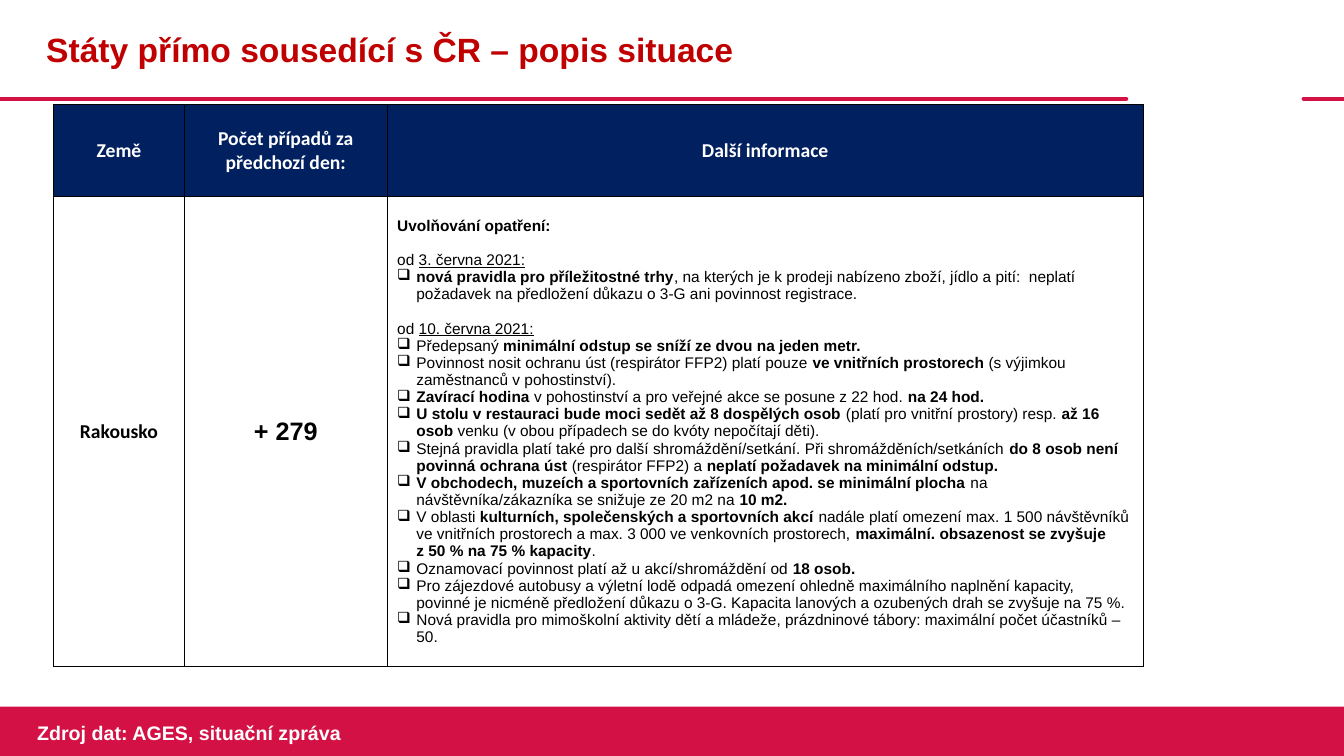
from lxml import etree
from pptx import Presentation
from pptx.dml.color import RGBColor
from pptx.enum import shapes, text
from pptx.oxml import ns
from pptx.util import Inches, Pt

COLORS = {"crimson": "D31145", "title": "C00000", "navy": "002060",
          "white": "FFFFFF", "black": "000000"}

HEADERS = ["Země", "Počet případů za předchozí den:", "Další informace"]

# Measures by start date; asterisks enclose bold text
MEASURES = {
    "3. června 2021:": [
        "*nová pravidla pro příležitostné trhy*, na kterých je k prodeji nabízeno zboží, "
        "jídlo a pití: \u00a0neplatí požadavek na předložení důkazu o 3-G ani povinnost registrace.",
    ],
    "10. června 2021:": [
        "Předepsaný *minimální odstup se sníží ze dvou na jeden metr.*",
        "Povinnost nosit ochranu úst (respirátor FFP2) platí pouze *ve vnitřních prostorech* "
        "(s výjimkou zaměstnanců v pohostinství).",
        "*Zavírací hodina* v pohostinství a pro veřejné akce se posune z 22 hod. *na 24 hod.*",
        "*U stolu v restauraci bude moci sedět až 8 dospělých osob* (platí pro vnitřní prostory) "
        "resp. *až 16 osob* venku (v obou případech se do kvóty nepočítají děti).",
        "Stejná pravidla platí také pro další shromáždění/setkání. Při shromážděních/setkáních "
        "*do 8 osob není povinná ochrana úst* (respirátor FFP2) a "
        "*neplatí požadavek na minimální odstup.*",
        "*V obchodech, muzeích a sportovních zařízeních apod. se minimální plocha* na "
        "návštěvníka/zákazníka se snižuje ze 20 m2 na* 10 m2.*",
        "V oblasti *kulturních, společenských a sportovních akcí *nadále platí omezení max. "
        "1 500 návštěvníků ve vnitřních prostorech a max. 3 000 ve venkovních prostorech, "
        "*maximální. obsazenost se zvyšuje z\u00a050 % na 75 % kapacity*.",
        "Oznamovací povinnost platí až u akcí/shromáždění od *18 osob.*",
        "Pro zájezdové autobusy a výletní lodě odpadá omezení ohledně maximálního naplnění "
        "kapacity, povinné je nicméně předložení důkazu o 3-G. Kapacita lanových a ozubených "
        "drah se zvyšuje na 75 %.",
        "Nová pravidla pro mimoškolní aktivity dětí a mládeže, prázdninové tábory: maximální "
        "počet účastníků – 50.",
    ],
}


def rgb(name):
    return RGBColor.from_string(COLORS[name])


def style(para, size, color="black", font="Arial", bold=False):
    para.font.name = font
    para.font.size = Pt(size)
    para.font.bold = bold
    para.font.color.rgb = rgb(color)


def add_rule(page, start, end):
    y = Inches(0.98)
    rule = page.shapes.add_connector(
        shapes.MSO_CONNECTOR.STRAIGHT, Inches(start), y, Inches(end), y)
    rule.line.color.rgb = rgb("crimson")
    rule.line.width = Pt(3)
    rule.line._get_or_add_ln().set("cap", "rnd")
    etree.SubElement(rule._element.spPr, ns.qn("a:effectLst"))


def add_band(page, top, height):
    band = page.shapes.add_shape(
        shapes.MSO_SHAPE.RECTANGLE, 0, Inches(top), Inches(13.33), Inches(height))
    band.shadow.inherit = False
    band.fill.solid()
    band.fill.fore_color.rgb = rgb("crimson")
    band.line.fill.background()


def add_label(page, words, place, size, color, wrap=True):
    box = page.shapes.add_textbox(*map(Inches, place))
    frame = box.text_frame
    frame.word_wrap = wrap
    frame.vertical_anchor = text.MSO_ANCHOR.MIDDLE
    para = frame.paragraphs[0]
    para.text = words
    style(para, size, color, bold=True)


def set_borders(cell):
    properties = cell._tc.get_or_add_tcPr()
    for position, side in enumerate(("lnL", "lnR", "lnT", "lnB")):
        line = etree.Element(ns.qn(f"a:{side}"), w=str(Pt(1)))
        fill = etree.SubElement(line, ns.qn("a:solidFill"))
        etree.SubElement(fill, ns.qn("a:srgbClr"), val=COLORS["black"])
        properties.insert(position, line)


def fill_cell(cell, words, size, color="black", font="Calibri"):
    para = cell.text_frame.paragraphs[0]
    para.text = words
    para.alignment = text.PP_ALIGN.CENTER
    style(para, size, color, font, bold=True)


def add_bullet(para):
    properties = para._p.get_or_add_pPr()
    indent = Inches(0.19)
    properties.set("marL", str(indent))
    properties.set("indent", str(-indent))
    etree.SubElement(properties, ns.qn("a:buChar"), char="❑")


def write_measures(frame):
    heading = frame.paragraphs[0]
    heading.text = "Uvolňování opatření:"
    style(heading, 11, bold=True)
    for date, items in MEASURES.items():
        para = frame.add_paragraph()
        para.space_before = Pt(12.3)
        style(para, 11)
        para.add_run().text = "od "
        span = para.add_run()
        span.text = date
        span.font.underline = True
        for item in items:
            para = frame.add_paragraph()
            add_bullet(para)
            style(para, 11)
            for number, part in enumerate(item.split("*")):
                if part:
                    span = para.add_run()
                    span.text = part
                    if number % 2:
                        span.font.bold = True


def add_country_table(page):
    widths, heights = (1.3, 2.01, 7.5), (0.91, 4.54)
    table = page.shapes.add_table(
        2, 3, Inches(0.53), Inches(1.04),
        Inches(sum(widths)), Inches(sum(heights))).table
    table.first_row = table.horz_banding = False
    for column, width in zip(table.columns, widths):
        column.width = Inches(width)
    for row, height in zip(table.rows, heights):
        row.height = Inches(height)
    for cell in table.iter_cells():
        cell.vertical_anchor = text.MSO_ANCHOR.MIDDLE
        cell.fill.solid()
        cell.fill.fore_color.rgb = rgb("white")
        set_borders(cell)
    for column, header in enumerate(HEADERS):
        cell = table.cell(0, column)
        cell.fill.fore_color.rgb = rgb("navy")
        fill_cell(cell, header, 14, "white")
    fill_cell(table.cell(1, 0), "Rakousko", 14)
    fill_cell(table.cell(1, 1), "+ 279", 18, font="Arial")
    write_measures(table.cell(1, 2).text_frame)


def main():
    deck = Presentation()
    deck.slide_width, deck.slide_height = Inches(13.33), Inches(7.5)
    page = deck.slides.add_slide(deck.slide_layouts[6])

    # Frame of the page
    add_rule(page, 0, 11.17)
    add_rule(page, 12.93, 13.33)
    add_band(page, 7.01, 0.49)

    # Content
    add_label(page, "Státy přímo sousedící s ČR – popis situace",
              (0.36, 0, 10.81, 0.98), 24, "title")
    add_country_table(page)
    add_label(page, "Zdroj dat: AGES, situační zpráva",
              (0.27, 7.1, 3.28, 0.34), 14, "white", wrap=False)

    deck.save("out.pptx")


if __name__ == "__main__":
    main()
